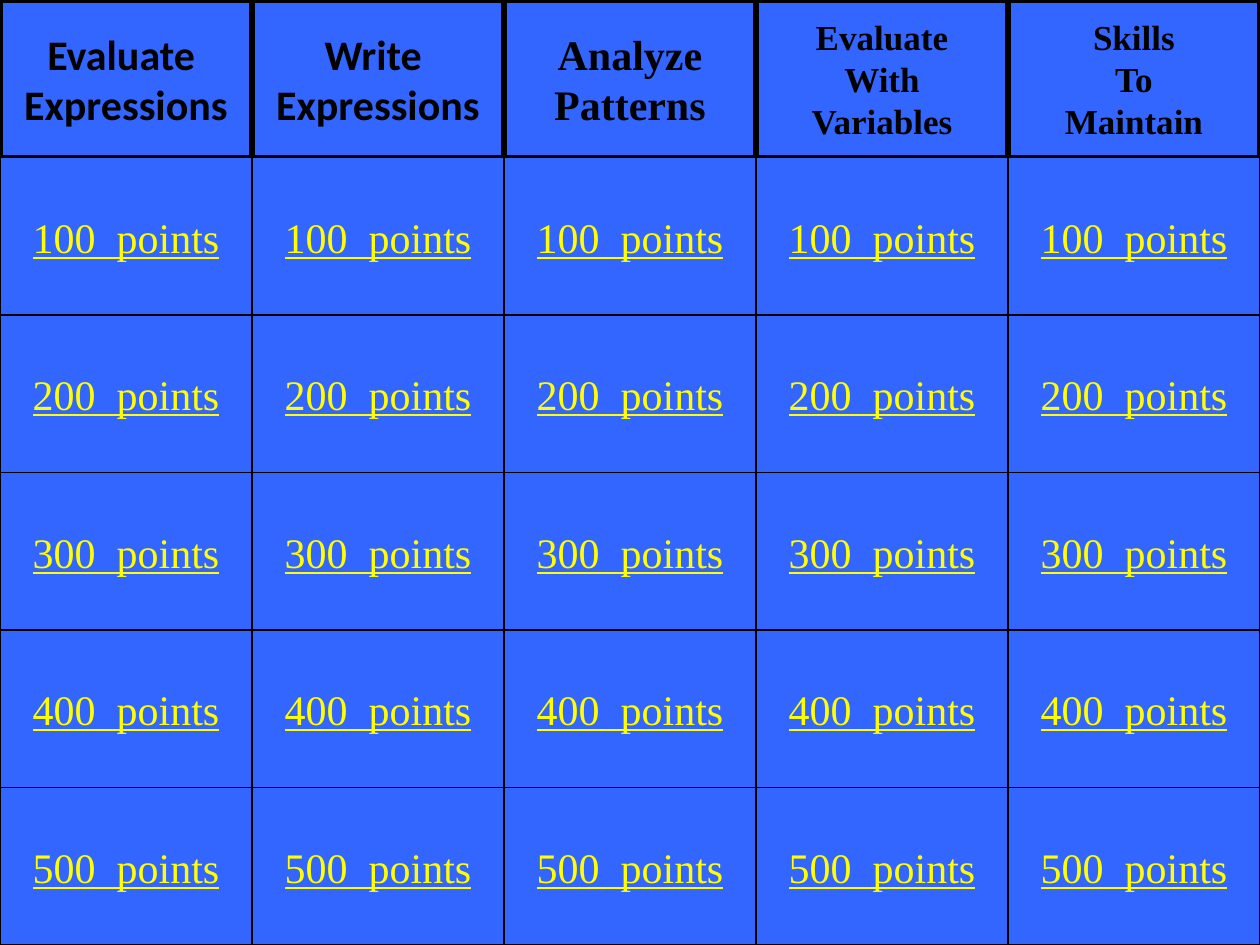
from pptx import Presentation
from pptx import util as u
from pptx.dml import color
from pptx.enum import shapes, text

COLS, ROWS = 5, 6
BLUE, BLACK, YELLOW = "3366FF", "000000", "FFFF00"
SERIF, SANS = "Times New Roman", "Calibri"


def paint(target, hex_rgb):
    target.solid()
    target.fore_color.rgb = color.RGBColor.from_string(hex_rgb)


def add_cell(col, row, kind, line_width, lines, rgb, fmt):
    sp = s.shapes.add_shape(kind, col * cell_w, row * cell_h, cell_w, cell_h)
    sp.shadow.inherit = False
    paint(sp.fill, BLUE)
    paint(sp.line.fill, BLACK)
    sp.line.width = u.Pt(line_width)
    tf = sp.text_frame
    tf.word_wrap = False
    tf.vertical_anchor = text.MSO_ANCHOR.MIDDLE
    for i, line in enumerate(lines):
        p = tf.paragraphs[0] if i == 0 else tf.add_paragraph()
        p.alignment = text.PP_ALIGN.CENTER
        r = p.add_run()
        r.text = line
        paint(r.font.fill, rgb)
        for name, value in fmt.items():
            setattr(r.font, name, value)


# Slide and grid
prs = Presentation()
prs.slide_width, prs.slide_height = u.Inches(10), u.Inches(7.5)
cell_w, cell_h = prs.slide_width // COLS, prs.slide_height // ROWS
s = prs.slides.add_slide(prs.slide_layouts[6])
paint(s.background.fill, "3766FF")

# Category headings
headings = [
    (["Evaluate ", "Expressions"], SANS, 24),
    (["Write ", "Expressions"], SANS, 24),
    (["Analyze", "Patterns"], SERIF, 24),
    (["Evaluate", "With", "Variables"], SERIF, 20),
    (["Skills", "To", "Maintain"], SERIF, 20),
]
for col, (lines, font, size) in enumerate(headings):
    fmt = {"name": font, "size": u.Pt(size), "bold": True}
    add_cell(col, 0, shapes.MSO_SHAPE.RECTANGLE, 3, lines, BLACK, fmt)

# Point buttons
fmt = {"name": SERIF, "size": u.Pt(24), "underline": True}
for col in range(COLS):
    for row in range(1, ROWS):
        add_cell(col, row, shapes.MSO_SHAPE.ACTION_BUTTON_CUSTOM, 0.75,
                 [f"{row * 100}  points"], YELLOW, fmt)

prs.save("out.pptx")
